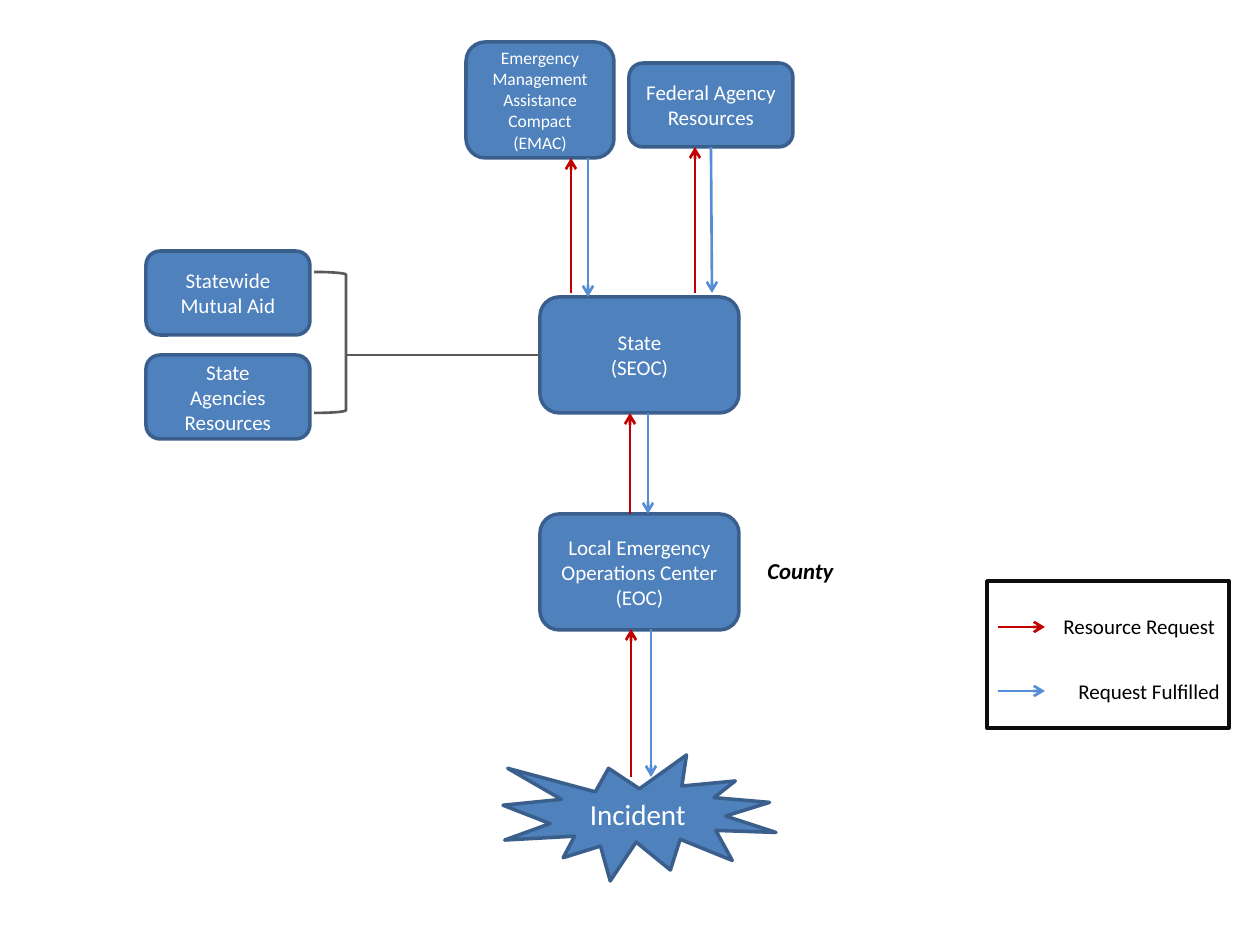
from dataclasses import dataclass
from typing import Optional

from lxml.etree import SubElement
from pptx import Presentation
from pptx.dml.color import RGBColor
from pptx.enum.shapes import MSO_CONNECTOR, MSO_SHAPE
from pptx.enum.text import MSO_ANCHOR, MSO_AUTO_SIZE, PP_ALIGN
from pptx.oxml.ns import qn
from pptx.util import Emu, Pt

PX_PER_INCH = 126
FONT = "Calibri"
WHITE = RGBColor(0xFF, 0xFF, 0xFF)
BLACK = RGBColor(0x00, 0x00, 0x00)
BOX_FILL = RGBColor(0x4F, 0x81, 0xBD)
BOX_EDGE = RGBColor(0x3A, 0x5F, 0x8C)
BRACKET_GREY = RGBColor(0x59, 0x59, 0x59)
LEGEND_EDGE = RGBColor(0x0D, 0x0D, 0x0D)
REQUEST_RED = RGBColor(0xC0, 0x00, 0x00)
FULFILLED_BLUE = RGBColor(0x55, 0x8E, 0xD5)


@dataclass(frozen=True)
class Node:
    key: str
    lines: tuple[str, ...]
    left: int
    top: int
    width: int
    height: int
    size: float = 12
    preset: MSO_SHAPE = MSO_SHAPE.ROUNDED_RECTANGLE


@dataclass(frozen=True)
class Flow:
    """A straight line; `start` and `end` are (node key, side) when joined."""
    color: RGBColor
    x1: int
    y1: int
    x2: int
    y2: int
    arrow: bool = True
    start: Optional[tuple[str, int]] = None
    end: Optional[tuple[str, int]] = None


@dataclass(frozen=True)
class Label:
    text: str
    left: int
    top: int
    width: int
    height: int
    size: float = 12
    emphasis: bool = False
    wrap: bool = False


NODES = (
    Node("incident", ("Incident",), 503, 755, 273, 126, 16.6, MSO_SHAPE.EXPLOSION1),
    Node("local", ("Local Emergency Operations Center", "(EOC)"), 540, 514, 199, 116),
    Node("state", ("State", "(SEOC)"), 540, 297, 199, 116),
    Node("mutual aid", ("Statewide Mutual Aid",), 146, 251, 164, 84),
    Node("agencies", ("State", "Agencies Resources"), 146, 355, 164, 84),
    Node("emac", ("Emergency Management Assistance Compact", "(EMAC)"),
         466, 42, 148, 116, 10),
    Node("federal", ("Federal Agency Resources",), 629, 63, 164, 84),
)

FLOWS = (
    Flow(BRACKET_GREY, 346, 355, 540, 355, arrow=False, end=("state", 1)),
    Flow(REQUEST_RED, 631, 777, 631, 629),
    Flow(FULFILLED_BLUE, 651, 629, 651, 777),
    Flow(REQUEST_RED, 630, 514, 630, 413),
    Flow(FULFILLED_BLUE, 648, 413, 648, 514),
    Flow(REQUEST_RED, 571, 293, 571, 158),
    Flow(FULFILLED_BLUE, 588, 158, 588, 297),
    Flow(REQUEST_RED, 695, 293, 695, 147),
    Flow(FULFILLED_BLUE, 711, 147, 712, 293, start=("federal", 2)),
    Flow(REQUEST_RED, 998, 627, 1045, 627),
    Flow(FULFILLED_BLUE, 998, 691, 1045, 691),
)

LABELS = (
    Label("County", 755, 551, 95, 40, 13, emphasis=True, wrap=True),
    Label("Resource Request", 1051, 607, 179, 38),
    Label("Request Fulfilled", 1066, 672, 168, 38),
)


def px(*lengths: int) -> list[Emu]:
    return [Emu(round(length * 914400 / PX_PER_INCH)) for length in lengths]


def write_lines(frame, lines: tuple[str, ...], align: PP_ALIGN, font_format: dict) -> None:
    for index, line in enumerate(lines):
        paragraph = frame.paragraphs[0] if index == 0 else frame.add_paragraph()
        paragraph.alignment = align
        run = paragraph.add_run()
        run.text = line
        for name, value in font_format.items():
            setattr(run.font, name, value)


def set_color(frame, color: RGBColor) -> None:
    for paragraph in frame.paragraphs:
        for run in paragraph.runs:
            run.font.color.rgb = color


def draw_outline(slide, preset: MSO_SHAPE, box: tuple[int, int, int, int],
                 edge: RGBColor, weight: float, fill: Optional[RGBColor] = None):
    shape = slide.shapes.add_shape(preset, *px(*box))
    shape.shadow.inherit = False
    if fill is None:
        shape.fill.background()
    else:
        shape.fill.solid()
        shape.fill.fore_color.rgb = fill
    shape.line.color.rgb = edge
    shape.line.width = Pt(weight)
    return shape


def draw_node(slide, node: Node):
    box = (node.left, node.top, node.width, node.height)
    shape = draw_outline(slide, node.preset, box, BOX_EDGE, 2, BOX_FILL)
    frame = shape.text_frame
    frame.word_wrap = True
    frame.vertical_anchor = MSO_ANCHOR.MIDDLE
    write_lines(frame, node.lines, PP_ALIGN.CENTER, {"name": FONT, "size": Pt(node.size)})
    set_color(frame, WHITE)
    return shape


def draw_flow(slide, flow: Flow, nodes: dict) -> None:
    connector = slide.shapes.add_connector(
        MSO_CONNECTOR.STRAIGHT, *px(flow.x1, flow.y1, flow.x2, flow.y2))
    if flow.start:
        key, side = flow.start
        connector.begin_connect(nodes[key], side)
    if flow.end:
        key, side = flow.end
        connector.end_connect(nodes[key], side)
    connector.line.color.rgb = flow.color
    connector.line.width = Pt(1.5)
    if flow.arrow:
        SubElement(connector.line._get_or_add_ln(), qn("a:tailEnd"), type="arrow")
    SubElement(connector._element.spPr, qn("a:effectLst"))


def draw_label(slide, label: Label) -> None:
    text_box = slide.shapes.add_textbox(
        *px(label.left, label.top, label.width, label.height))
    frame = text_box.text_frame
    frame.word_wrap = label.wrap
    frame.auto_size = MSO_AUTO_SIZE.SHAPE_TO_FIT_TEXT
    write_lines(frame, (label.text,), PP_ALIGN.LEFT, {
        "name": FONT, "size": Pt(label.size),
        "bold": label.emphasis, "italic": label.emphasis})
    set_color(frame, BLACK)


def main() -> None:
    deck = Presentation()
    deck.slide_width, deck.slide_height = px(1260, 945)
    slide = deck.slides.add_slide(deck.slide_layouts[6])

    nodes = {node.key: draw_node(slide, node) for node in NODES}
    draw_outline(slide, MSO_SHAPE.RIGHT_BRACKET, (314, 272, 32, 141), BRACKET_GREY, 1.5)
    draw_outline(slide, MSO_SHAPE.RECTANGLE, (987, 581, 242, 147), LEGEND_EDGE, 2)
    for flow in FLOWS:
        draw_flow(slide, flow, nodes)
    for label in LABELS:
        draw_label(slide, label)

    deck.save("out.pptx")


if __name__ == "__main__":
    main()
